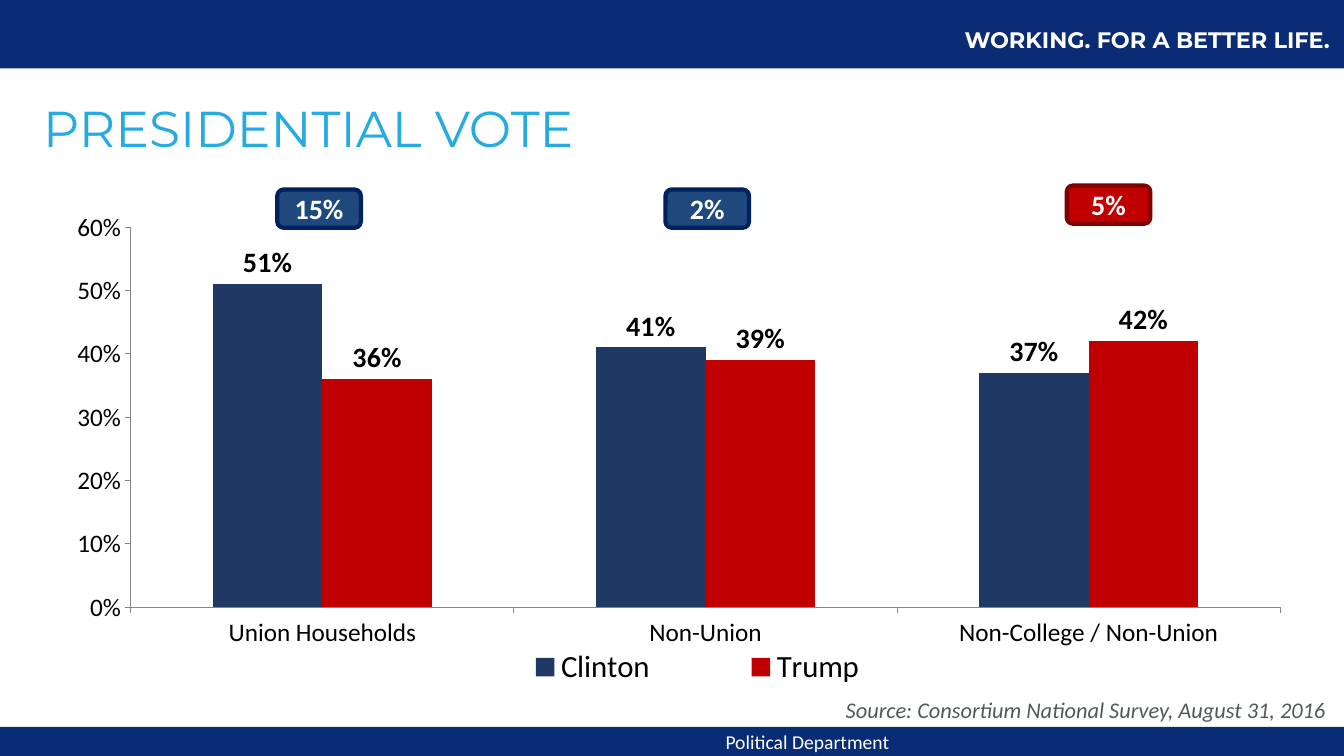
from dataclasses import dataclass

from lxml import etree
from pptx import Presentation
from pptx import util as u
from pptx.chart.data import CategoryChartData
from pptx.dml.color import RGBColor
from pptx.enum import chart as ch, shapes, text
from pptx.oxml.ns import qn


@dataclass(frozen=True)
class Theme:
    band: str = "092C74"
    title: str = "25AAE1"
    source: str = "535959"
    white: str = "FFFFFF"
    black: str = "000000"
    axis: str = "868686"
    clinton: str = "203864"
    trump: str = "C00000"
    clinton_lead: tuple = ("1F497D", "002060")
    trump_lead: tuple = ("C00000", "800000")
    heading_font: str = "Montserrat"
    body_font: str = "Calibri"
    title_size: int = 36
    legend_size: int = 22
    label_size: int = 20
    axis_size: int = 18
    note_size: int = 16
    footer_size: int = 14


T = Theme()
LEFT, CENTER, RIGHT = text.PP_ALIGN.LEFT, text.PP_ALIGN.CENTER, text.PP_ALIGN.RIGHT
WIDTH, HEIGHT = 13.33, 7.5


def style_font(font, size, color, name=T.body_font, bold=False, italic=False):
    font.size, font.name, font.bold, font.italic = u.Pt(size), name, bold, italic
    font.color.rgb = RGBColor.from_string(color)


def write(sp, words, align=LEFT, spacing=None, **font):
    tf = sp.text_frame
    tf.word_wrap = True
    tf.vertical_anchor = text.MSO_ANCHOR.MIDDLE
    p = tf.paragraphs[0]
    p.alignment = align
    if spacing:
        p.line_spacing = spacing
    r = p.add_run()
    r.text = words
    style_font(r.font, **font)


def add_text(s, box, words, **fmt):
    write(s.shapes.add_textbox(*map(u.Inches, box)), words, **fmt)


def add_block(s, kind, box, fill, line=None):
    sp = s.shapes.add_shape(kind, *map(u.Inches, box))
    sp.shadow.inherit = False
    sp.fill.solid()
    sp.fill.fore_color.rgb = RGBColor.from_string(fill)
    if line:
        sp.line.color.rgb = RGBColor.from_string(line)
        sp.line.width = u.Pt(3)
    else:
        sp.line.fill.background()
    return sp


def add_header(s, x, y, w, h):
    add_block(s, shapes.MSO_SHAPE.RECTANGLE, (x, y, w, h), T.band)
    add_text(s, (x + w - 4.72, y + 0.21, 4.68, 0.37), "WORKING. FOR A BETTER LIFE.",
             align=RIGHT, size=T.note_size, color=T.white, name=T.heading_font, bold=True)


def add_footer(s, x, y, w, h):
    add_block(s, shapes.MSO_SHAPE.RECTANGLE, (x, y, w, h), T.band)
    add_text(s, (x + 4.42, y + 0.07, 4.5, 0.15), "Political Department",
             align=RIGHT, size=T.footer_size, color=T.white)
    add_text(s, (x + w - 5.04, y - 0.36, 5.04, 0.37),
             "Source: Consortium National Survey, August 31, 2016",
             size=T.note_size, color=T.source, italic=True)


def set_layout(parent, index, x, y, w, h, inner=False):
    """Give a plot area or legend a fixed place, in fractions of the chart."""
    for old in parent.findall(qn("c:layout")):
        parent.remove(old)
    layout = etree.Element(qn("c:layout"))
    parent.insert(index, layout)
    manual = etree.SubElement(layout, qn("c:manualLayout"))
    values = {"layoutTarget": "inner"} if inner else {}
    values.update(xMode="edge", yMode="edge", x=x, y=y, w=w, h=h)
    for tag, value in values.items():
        etree.SubElement(manual, qn(f"c:{tag}")).set("val", str(value))


def add_vote_chart(s, x, y, w, h):
    data = CategoryChartData(number_format="0%")
    data.categories = ["Union Households", "Non-Union", "Non-College / Non-Union"]
    data.add_series("Clinton", (0.51, 0.41, 0.37))
    data.add_series("Trump", (0.36, 0.39, 0.42))
    chart = s.shapes.add_chart(ch.XL_CHART_TYPE.COLUMN_CLUSTERED,
                               *map(u.Inches, (x, y, w, h)), data).chart
    chart.has_title = False
    style_font(chart.font, T.axis_size, T.black)

    plot = chart.plots[0]
    plot.vary_by_categories = False
    plot.gap_width, plot.overlap = 150, 0
    for series, color in zip(plot.series, (T.clinton, T.trump)):
        series.format.fill.solid()
        series.format.fill.fore_color.rgb = RGBColor.from_string(color)
        labels = series.data_labels
        labels.show_value = True
        labels.number_format, labels.number_format_is_linked = "0%", False
        labels.position = ch.XL_LABEL_POSITION.OUTSIDE_END
        style_font(labels.font, T.label_size, T.black, bold=True)

    for axis in (chart.category_axis, chart.value_axis):
        axis.has_major_gridlines = False
        axis.major_tick_mark = ch.XL_TICK_MARK.OUTSIDE
        axis.format.line.color.rgb = RGBColor.from_string(T.axis)
        style_font(axis.tick_labels.font, T.axis_size, T.black)
    values = chart.value_axis
    values.minimum_scale, values.maximum_scale, values.major_unit = 0, 0.6, 0.1
    values.tick_labels.number_format = "0%"
    values.tick_labels.number_format_is_linked = False

    chart.has_legend = True
    legend = chart.legend
    legend.position = ch.XL_LEGEND_POSITION.BOTTOM
    legend.include_in_layout = False
    style_font(legend.font, T.legend_size, T.black)
    root = chart.element
    set_layout(root.find(".//" + qn("c:plotArea")), 0, 0.073, 0.038, 0.907, 0.779, inner=True)
    set_layout(root.find(".//" + qn("c:legend")), 1, 0.32, 0.89, 0.4, 0.1)


def add_lead(s, x, y, words, colors):
    """Badge with the leading candidate's margin."""
    sp = add_block(s, shapes.MSO_SHAPE.ROUNDED_RECTANGLE, (x, y, 0.83, 0.38), *colors)
    write(sp, words, align=CENTER, size=T.label_size, color=T.white, bold=True)


def add_vote_slide(prs):
    s = prs.slides.add_slide(prs.slide_layouts[6])
    add_header(s, 0, 0, WIDTH, 0.68)
    add_footer(s, 0, 7.21, WIDTH, 0.29)
    add_text(s, (0.33, 0.82, 11.55, 0.96), "PRESIDENTIAL VOTE", spacing=0.9,
             size=T.title_size, color=T.title, name=T.heading_font)
    add_vote_chart(s, 0.38, 2.07, 12.57, 4.84)
    for x, y, words, colors in ((2.75, 1.88, "15%", T.clinton_lead),
                                (6.6, 1.88, "2%", T.clinton_lead),
                                (10.58, 1.84, "5%", T.trump_lead)):
        add_lead(s, x, y, words, colors)


def main():
    prs = Presentation()
    prs.slide_width, prs.slide_height = u.Inches(WIDTH), u.Inches(HEIGHT)
    add_vote_slide(prs)
    prs.save("out.pptx")


if __name__ == "__main__":
    main()
